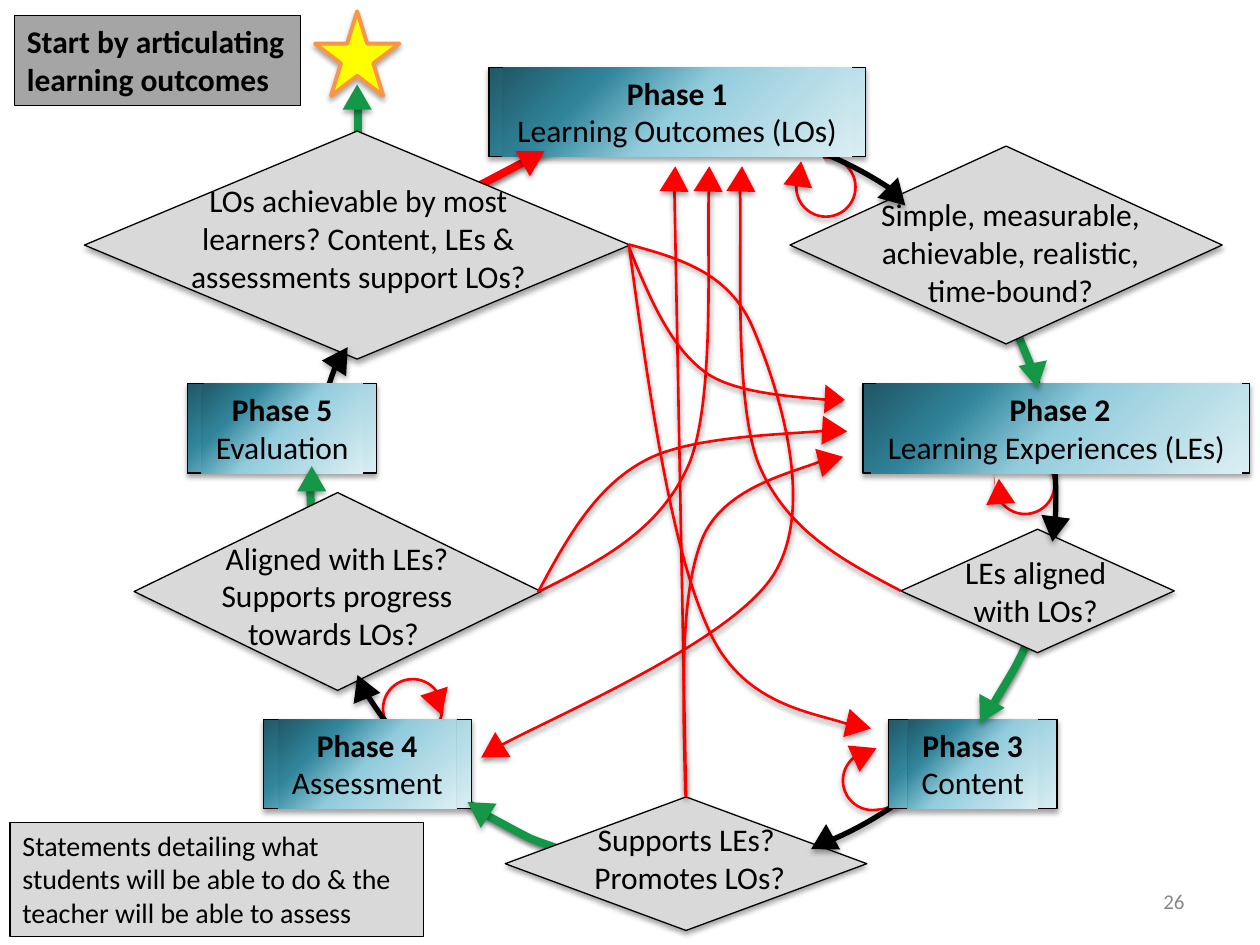
import dataclasses
import typing

import lxml.etree
import pptx
import pptx.dml.color
import pptx.enum.shapes
import pptx.enum.text
import pptx.oxml
import pptx.oxml.ns
import pptx.util

COLS = 100  # the slide is a grid of 100 columns by 75 rows
INK = {"black": "000000", "white": "FFFFFF", "red": "FF0000", "green": "159748",
       "gray": "D9D9D9", "steel": "A5A5A5", "dim": "888888", "gold": "FFFF00",
       "orange": "F79646"}
TEAL = {0: "DAEEF3", 25: "B6DDE7", 50: "92CCDC", 75: "31859B", 100: "205867"}
KIND = pptx.enum.shapes.MSO_SHAPE
ALIGN = pptx.enum.text.PP_ALIGN
ANCHOR = pptx.enum.text.MSO_ANCHOR
FIT = pptx.enum.text.MSO_AUTO_SIZE

deck = pptx.Presentation()
deck.slide_width = pptx.util.Inches(10)
deck.slide_height = pptx.util.Inches(7.5)
slide = deck.slides.add_slide(deck.slide_layouts[6])
CELL = deck.slide_width / COLS


@dataclasses.dataclass
class Box:
    x: float
    y: float
    w: float
    h: float


@dataclasses.dataclass
class Gate:
    area: Box
    label: Box
    lines: list[str]


@dataclasses.dataclass
class Phase:
    area: Box
    inset: float
    lines: list[str]


@dataclasses.dataclass
class Tip:
    x: float
    y: float
    turn: float
    color: str = "red"
    h: float = 2


@dataclasses.dataclass
class Chord:
    area: Box
    turn: float
    end: float


def emu(*cells: float) -> list[int]:
    return [round(c * CELL) for c in cells]


def rgb(name: str) -> pptx.dml.color.RGBColor:
    return pptx.dml.color.RGBColor.from_string(INK[name])


def shade(shape: typing.Any, alpha: int = 35, on: bool = True) -> None:
    """Close the shape's format with a soft shadow below it, or with none."""
    glow = ('<a:outerShdw blurRad="39370" dist="22860" dir="5400000" rotWithShape="0">'
            f'<a:srgbClr val="000000"><a:alpha val="{alpha}000"/></a:srgbClr></a:outerShdw>')
    shape._element.spPr.append(pptx.oxml.parse_xml(
        f'<a:effectLst {pptx.oxml.ns.nsdecls("a")}>{glow if on else ""}</a:effectLst>'))


def stroke(shape: typing.Any, color: str | None, width: float) -> None:
    if color:
        shape.line.color.rgb = rgb(color)
        shape.line.width = pptx.util.Pt(width)
    else:
        shape.line.fill.background()


def teal(shape: typing.Any) -> None:
    """Swap the empty fill for a gradient that starts in the lower right corner."""
    stops = "".join(f'<a:gs pos="{p}000"><a:srgbClr val="{c}"/></a:gs>' for p, c in TEAL.items())
    props = shape._element.spPr
    props.replace(props.find(pptx.oxml.ns.qn("a:noFill")), pptx.oxml.parse_xml(
        f'<a:gradFill {pptx.oxml.ns.nsdecls("a")} rotWithShape="1"><a:gsLst>{stops}</a:gsLst>'
        '<a:path path="circle"><a:fillToRect l="100000" t="100000"/></a:path></a:gradFill>'))


def draw(kind: typing.Any, area: Box, fill: str | None = None, line: str | None = None,
         width: float = 0.75, turn: float = 0, soft: bool = True) -> typing.Any:
    shape = slide.shapes.add_shape(kind, *emu(area.x, area.y, area.w, area.h))
    shape.rotation = turn
    shape.fill.background()
    if fill == "teal":
        teal(shape)
    elif fill:
        shape.fill.solid()
        shape.fill.fore_color.rgb = rgb(fill)
    stroke(shape, line, width)
    shade(shape, on=soft)
    return shape


def write(lines: list[str], shape: typing.Any = None, area: Box | None = None, size: float = 18,
          bold: int = 0, color: str = "black", align: typing.Any = ALIGN.CENTER,
          anchor: typing.Any = ANCHOR.TOP, fit: typing.Any = FIT.SHAPE_TO_FIT_TEXT) -> None:
    """Fill a shape, or a new text box, with lines; the first `bold` lines are bold."""
    if area:
        shape = slide.shapes.add_textbox(*emu(area.x, area.y, area.w, area.h))
    frame = shape.text_frame
    frame.word_wrap = True
    frame.auto_size = fit
    frame.vertical_anchor = anchor
    for n, line in enumerate(lines):
        para = frame.add_paragraph() if n else frame.paragraphs[0]
        para.alignment = align
        run = para.add_run()
        run.text = line
        run.font.name = "Calibri"
        run.font.size = pptx.util.Pt(size)
        run.font.bold = n < bold
        run.font.color.rgb = rgb(color)


def link(a: tuple, b: tuple, color: str, width: float, gate: typing.Any = None) -> None:
    line = slide.shapes.add_connector(pptx.enum.shapes.MSO_CONNECTOR.STRAIGHT, *emu(*a, *b))
    if gate is not None:
        line.begin_connect(gate, 0)
    stroke(line, color, width)
    shade(line, 38)


def curve(knots: list[tuple], color: str = "red", width: float = 1.5) -> None:
    """Draw cubic curves: a start, then two controls and an end for each."""
    pen = slide.shapes.build_freeform(*emu(*knots[0]))
    pen.add_line_segments([tuple(emu(*k)) for k in knots[1:]], close=False)
    shape = pen.convert_to_shape()
    legs = list(shape._element.iter(pptx.oxml.ns.qn("a:lnTo")))
    for i in range(0, len(legs), 3):
        bend = lxml.etree.Element(pptx.oxml.ns.qn("a:cubicBezTo"))
        legs[i].addprevious(bend)
        for leg in legs[i:i + 3]:
            bend.append(leg[0])
            leg.getparent().remove(leg)
    shape.fill.background()
    stroke(shape, color, width)
    shade(shape, 38)


def point(tip: Tip) -> None:
    draw(KIND.ISOSCELES_TRIANGLE, Box(tip.x, tip.y, 2.3, tip.h), tip.color, turn=tip.turn)


# Page number
write(["26"], area=Box(71.7, 69.5, 23.3, 4), size=12, color="dim", align=ALIGN.RIGHT,
      anchor=ANCHOR.MIDDLE, fit=FIT.NONE)

# Repeat loops, the main ring, and white chords that open the loops
for x, y in [(79, 36.1), (63.2, 12.5), (30.4, 53.9), (66.9, 59.6)]:
    draw(KIND.OVAL, Box(x, y, 4.7, 4.7), line="red", width=1.5)
draw(KIND.OVAL, Box(24.7, 10, 59.1, 59.1), line="black", width=3)
for c in [Chord(Box(67, 59.1, 5.8, 4.3), 277.3, 4.46), Chord(Box(78.5, 35.5, 4.2, 4.3), 136.9, 4.46),
          Chord(Box(61.4, 11.5, 4.2, 4.3), 112.1, 162)]:
    shape = draw(KIND.CHORD, c.area, "white", turn=c.turn, soft=False)
    shape.adjustments[0] = 52.95
    shape.adjustments[1] = c.end

# Thick pass and fail links over the ring
link((28.4, 8.1), (28.4, 10.6), "green", 4.5)
link((37.5, 15), (41.7, 12.8), "red", 4.5)
link((24.7, 40.7), (24.6, 38.4), "green", 4.5)
link((80.8, 26.6), (81.8, 29), "green", 4.5)
curve([(44.4, 67.4), (43.7, 67.1), (42.9, 66.9), (42, 66.5), (41, 66), (39.2, 65), (38.6, 64.7)],
      "green", 4.5)
curve([(81.6, 50.3), (81.5, 50.8), (81.4, 51.4), (80.9, 52.3), (80.5, 53.2), (79.2, 55.2),
       (78.9, 55.8)], "green", 4.5)

# Decision gates
GATES = [
    Gate(Box(71.5, 42, 21.7, 9.8), Box(73.9, 43.4, 16.6, 7.1), ["LEs aligned with LOs?"]),
    Gate(Box(62.7, 11.6, 34.3, 15.7), Box(66.3, 15, 27.8, 10.1),
         ["Simple, measurable, achievable, realistic, time-bound?"]),
    Gate(Box(10.65, 39.1, 32.3, 15.7), Box(12.75, 42.25, 28, 9.8),
         ["Aligned with LEs?", "Supports progress towards LOs? "]),
    Gate(Box(6.7, 10.4, 43.3, 18.1), Box(11.6, 13.9, 33.7, 10.1),
         ["LOs achievable by most learners? Content, LEs & assessments support LOs?"]),
    Gate(Box(40.1, 63.25, 28.7, 10.6), Box(44.95, 64.6, 19.6, 7.1),
         ["Supports LEs? ", "Promotes LOs?"]),
]
for gate in GATES:
    support = draw(KIND.FLOWCHART_DECISION, gate.area, "gray", "black")
    write(gate.lines, area=gate.label)
draw(KIND.STAR_5_POINT, Box(25, 0.9, 6.7, 6.7), "gold", "orange", 2.25)

# Phases
for p in [Phase(Box(14.9, 30.45, 15, 7.1), 1.1, ["Phase 5", "Evaluation"]),
          Phase(Box(20.9, 57.1, 16.5, 7.1), 1.2, ["Phase 4", "Assessment"]),
          Phase(Box(70.5, 57.1, 13.4, 7.1), 1.55, ["Phase 3", "Content"]),
          Phase(Box(68.5, 30.45, 30.7, 7.1), 0.65, [" Phase 2", "Learning Experiences (LEs)"]),
          Phase(Box(38.8, 5.35, 29.9, 7.1), 1.1, ["Phase 1", "Learning Outcomes (LOs)"])]:
    draw(KIND.RECTANGLE, p.area, "teal", "black")
    inner = dataclasses.replace(p.area, x=p.area.x + p.inset, w=p.area.w - 2 * p.inset)
    write(p.lines, draw(KIND.RECTANGLE, inner, "teal", soft=False), bold=1)

# Long return links
link((54.4, 63.1), (53.5, 13.8), "red", 1.5, support)
for knots in [
    [(71.5, 46.9), (66.9, 44.5), (62.4, 42.1), (60.2, 36.8), (58.1, 31.4), (59, 18.3), (58.7, 14.6)],
    [(42.9, 46.9), (47.7, 44.5), (52.4, 42.1), (54.7, 36.8), (56.9, 31.4), (56, 18.3), (56.3, 14.6)],
    [(49.9, 19.6), (51.5, 23.5), (53.1, 27.4), (55.9, 29.5), (58.7, 31.6), (65, 31.5), (66.8, 31.9)],
    [(49.9, 19.4), (53.9, 20.5), (57.8, 21.6), (59.7, 25.9), (61.6, 30.3), (64.9, 40), (61.4, 45.6),
     (57.8, 51.3), (42.3, 57.5), (38.4, 59.9)],
    [(42.7, 47), (44.9, 42.9), (47.2, 38.7), (51.1, 36.6), (55, 34.4), (63.7, 34.5), (66.3, 34.1)],
    [(49.9, 19.4), (51.6, 31.7), (53.3, 43.9), (56.4, 50.3), (59.4, 56.7), (66, 56.6), (68, 57.8)],
    [(54.4, 63.1), (54.2, 55.1), (53.9, 47.1), (55.8, 42.6), (57.8, 38.1), (64.3, 37.3), (66, 36.2)],
]:
    curve(knots)

# Arrow tips: ring, then loops, then return links
for tip in [
    Tip(64.1, 65.9, 240.9, "black"), Tip(70, 14.6, 135.4, "black"), Tip(81, 28.8, 168.8, "green"),
    Tip(82.5, 41, 187.5, "black"), Tip(77.1, 55.5, 208.7, "green"), Tip(36.8, 63.2, 302.9, "green"),
    Tip(27.6, 53.5, 337.7, "black"), Tip(23.6, 37, 0, "green"), Tip(25.9, 27.4, 32.9, "black"),
    Tip(41.2, 11.5, 60.2), Tip(27.2, 6.7, 0, "green"),
    Tip(33.6, 54.8, 162), Tip(67.5, 58.8, 65.4), Tip(78.2, 38, 355.9), Tip(62.3, 12.8, 7.7),
    Tip(52.4, 13.2, 2.5), Tip(55.1, 13.2, 2.5), Tip(57.7, 13.2, 2.5), Tip(65.1, 30.9, 92.6, h=1.6),
    Tip(37.9, 58.6, 238.7), Tip(65.1, 33.2, 92.8), Tip(67, 56.6, 102.7), Tip(64.8, 35.5, 76),
]:
    point(tip)

# Notes in the corners
write(["Start by articulating learning outcomes"], align=ALIGN.LEFT, bold=1,
      shape=draw(KIND.RECTANGLE, Box(1.15, 1.25, 22.7, 7.1), "steel", "black", soft=False))
write(["Statements detailing what students will be able to do & the teacher will be able to assess"],
      align=ALIGN.LEFT, size=16,
      shape=draw(KIND.RECTANGLE, Box(0.8, 65.25, 32.8, 9.1), "gray", "black", soft=False))

deck.save("out.pptx")
